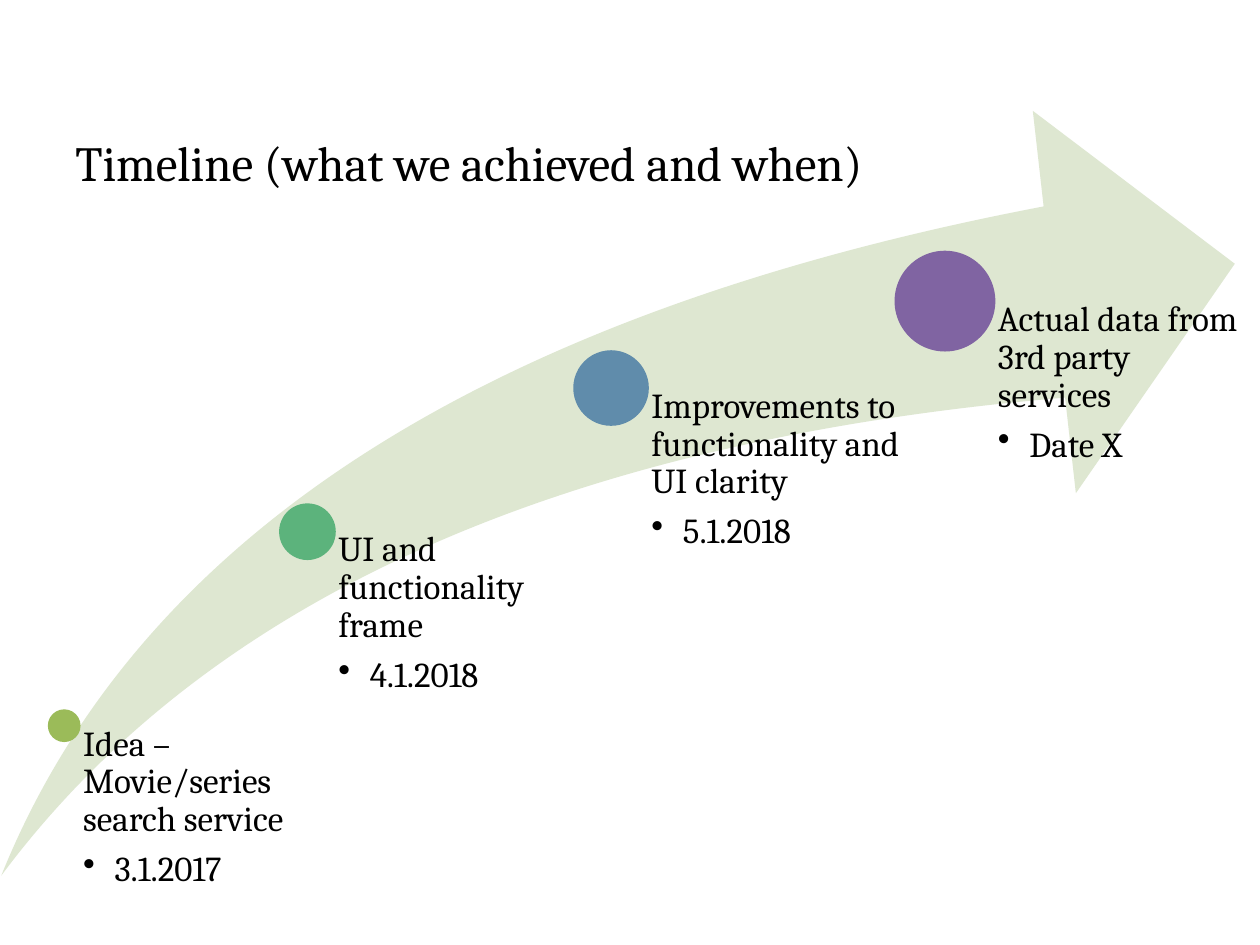
from dataclasses import dataclass

from lxml.etree import SubElement
from pptx import Presentation
from pptx.dml.color import RGBColor
from pptx.enum.shapes import MSO_SHAPE
from pptx.enum.text import MSO_ANCHOR
from pptx.oxml.ns import qn
from pptx.util import Inches, Pt

WIDE, HIGH = 10, 7.5
FLOOR = 7.44  # shared bottom edge of the step texts
FONT = "Cambria"
BLACK = RGBColor(0, 0, 0)
PALE = RGBColor(0xDE, 0xE7, 0xD1)
LIME = RGBColor(0x9B, 0xBB, 0x59)
GREEN = RGBColor(0x5C, 0xB3, 0x7C)
BLUE = RGBColor(0x60, 0x8C, 0xAB)
PURPLE = RGBColor(0x80, 0x64, 0xA2)


@dataclass
class Step:
    """A milestone: dot centre and diameter, text width, colour and wording."""
    x: float
    y: float
    size: float
    width: float
    color: RGBColor
    label: str
    date: str


STEPS = [
    Step(0.51, 5.76, 0.26, 1.93, LIME, "Idea – Movie/series search service", "3.1.2017"),
    Step(2.44, 4.22, 0.45, 2.37, GREEN, "UI and functionality frame", "4.1.2018"),
    Step(4.85, 3.08, 0.6, 2.37, BLUE, "Improvements to functionality and UI clarity", "5.1.2018"),
    Step(7.5, 2.39, 0.8, 2.37, PURPLE, "Actual data from 3rd party services", "Date X"),
]


def add_form(slide, kind: MSO_SHAPE, box: tuple, color: RGBColor):
    form = slide.shapes.add_shape(kind, *map(Inches, box))
    form.shadow.inherit = False
    form.fill.solid()
    form.fill.fore_color.rgb = color
    form.line.fill.background()
    return form


def add_text(slide, box: tuple, lines: list[str], size: int):
    frame = slide.shapes.add_textbox(*map(Inches, box)).text_frame
    frame.word_wrap = True
    frame.vertical_anchor = MSO_ANCHOR.TOP
    frame.text = "\n".join(lines)
    return frame


def style(frame, size: int) -> None:
    for para in frame.paragraphs:
        for run in para.runs:
            run.font.name = FONT
            run.font.size = Pt(size)
            run.font.color.rgb = BLACK


def add_bullet(para) -> None:
    props = para._p.get_or_add_pPr()
    props.set("marL", str(Inches(0.25)))
    props.set("indent", str(-Inches(0.25)))
    SubElement(props, qn("a:buChar")).set("char", "•")


def add_step(slide, step: Step) -> None:
    """Draw the dot, then its text starting at the dot's centre."""
    half = step.size / 2
    add_form(slide, MSO_SHAPE.OVAL,
             (step.x - half, step.y - half, step.size, step.size), step.color)
    frame = add_text(slide, (step.x, step.y, step.width, FLOOR - step.y),
                     [step.label, step.date], 20)
    frame.margin_left = Inches(half + 0.02)
    frame.margin_top = frame.margin_right = frame.margin_bottom = 0
    label, date = frame.paragraphs
    label.line_spacing = date.line_spacing = 0.9
    label.space_after, date.space_after = Pt(7), Pt(3)
    date.level = 1
    add_bullet(date)
    style(frame, 20)


def main() -> None:
    deck = Presentation()
    deck.slide_width, deck.slide_height = Inches(WIDE), Inches(HIGH)
    slide = deck.slides.add_slide(deck.slide_layouts[6])
    arrow = add_form(slide, MSO_SHAPE.SWOOSH_ARROW, (0.01, 0.88, 9.79, 6.07), PALE)
    arrow.adjustments[0] = arrow.adjustments[1] = 0.25
    for step in STEPS:
        add_step(slide, step)
    title = add_text(slide, (WIDE * 0.05, 1, WIDE * 0.9, 1),
                     ["Timeline (what we achieved and when)"], 28)
    style(title, 28)
    deck.save("out.pptx")


if __name__ == "__main__":
    main()
